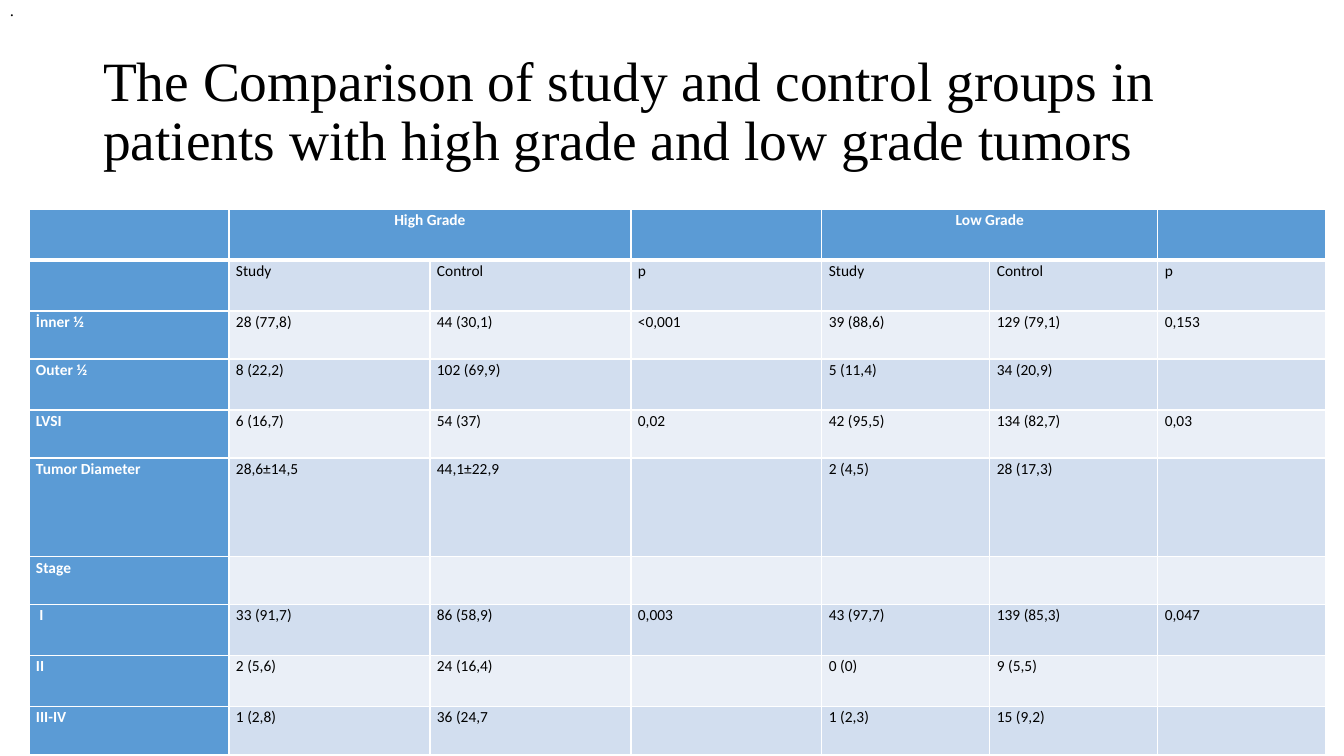
from lxml import etree
from pptx import Presentation
from pptx.dml.color import RGBColor
from pptx.enum.text import MSO_ANCHOR, MSO_AUTO_SIZE, PP_ALIGN
from pptx.oxml.ns import qn
from pptx.util import Emu, Pt

TOP, MIDDLE = MSO_ANCHOR.TOP, MSO_ANCHOR.MIDDLE
LEFT, CENTER = PP_ALIGN.LEFT, PP_ALIGN.CENTER
NO_FIT = MSO_AUTO_SIZE.NONE
SERIF, SANS = "Times New Roman", "Calibri"
BLACK, WHITE, BLUE = "000000", "FFFFFF", "5B9BD5"
BANDS = ("EAEFF7", "D2DEEF")

COLUMN_WIDTHS = (200, 201, 201, 191, 168, 168, 168)
ROW_HEIGHTS = (51, 51, 48, 51, 48, 99, 48, 51, 51, 48)
ROWS = (
    ("", "High Grade", "", "", "Low Grade", "", ""),
    ("", "Study", "Control", "p", "Study", "Control", "p"),
    ("İnner ½", "28 (77,8)", "44 (30,1)", "<0,001", "39 (88,6)", "129 (79,1)", "0,153"),
    ("Outer ½", "8 (22,2)", "102 (69,9)", "", "5 (11,4)", "34 (20,9)", ""),
    ("LVSI", "6 (16,7)", "54 (37)", "0,02", "42 (95,5)", "134 (82,7)", "0,03"),
    ("Tumor Diameter", "28,6±14,5", "44,1±22,9", "", "2 (4,5)", "28 (17,3)", ""),
    ("Stage", "", "", "", "", "", ""),
    (" I", "33 (91,7)", "86 (58,9)", "0,003", "43 (97,7)", "139 (85,3)", "0,047"),
    ("II", "2 (5,6)", "24 (16,4)", "", "0 (0)", "9 (5,5)", ""),
    ("III-IV", "1 (2,8)", "36 (24,7", "", "1 (2,3)", "15 (9,2)", ""),
)


def px(n):
    return Emu(round(n * 914400 / 100.8))


def color(value):
    return RGBColor.from_string(value)


def format_text(p, size, font, fill, bold=False, align=LEFT, spacing=1.0):
    p.alignment = align
    p.line_spacing = spacing
    for r in p.runs:
        r.font.size = Pt(size)
        r.font.name = font
        r.font.bold = bold
        r.font.color.rgb = color(fill)


def add_title(s, x, y, w, h):
    sp = s.shapes.title
    sp.left, sp.top, sp.width, sp.height = map(px, (x, y, w, h))
    tf = sp.text_frame
    tf.text = "The Comparison of study and control groups in patients with high grade and low grade tumors"
    tf.word_wrap = True
    tf.auto_size = NO_FIT
    tf.vertical_anchor = MIDDLE
    format_text(tf.paragraphs[0], 39.6, SERIF, BLACK, spacing=0.9)


def add_dot(s, x, y, w, h):
    tf = s.shapes.add_textbox(*map(px, (x, y, w, h))).text_frame
    tf.text = "."
    tf.word_wrap = False
    tf.vertical_anchor = TOP
    format_text(tf.paragraphs[0], 12, SERIF, BLACK)


def set_borders(cell, widths):
    tcPr = cell._tc.get_or_add_tcPr()
    for side, width in zip("LRTB", widths):
        ln = etree.SubElement(tcPr, qn(f"a:ln{side}"), w=str(Pt(width)))
        fill = etree.SubElement(ln, qn("a:solidFill"))
        etree.SubElement(fill, qn("a:srgbClr"), val=WHITE)


def format_cell(cell, row, col, text):
    header = row == 0 or col == 0
    set_borders(cell, (1, 1, 3 if row == 1 else 1, 3 if row == 0 else 1))
    cell.fill.solid()
    cell.fill.fore_color.rgb = color(BLUE if header else BANDS[row % 2])
    cell.margin_left = cell.margin_right = px(7)
    cell.margin_top = cell.margin_bottom = 0
    cell.vertical_anchor = TOP
    if text:
        cell.text = text
        format_text(cell.text_frame.paragraphs[0], 11, SANS, WHITE if header else BLACK,
                    header, CENTER if row == 0 else LEFT, 1.07)


def add_comparison_table(s, x, y):
    size = (sum(COLUMN_WIDTHS), sum(ROW_HEIGHTS))
    table = s.shapes.add_table(len(ROWS), len(COLUMN_WIDTHS), px(x), px(y), *map(px, size)).table
    for column, width in zip(table.columns, COLUMN_WIDTHS):
        column.width = px(width)
    for row, height in zip(table.rows, ROW_HEIGHTS):
        row.height = px(height)
    for i, values in enumerate(ROWS):
        for j, text in enumerate(values):
            format_cell(table.cell(i, j), i, j, text)
    for j in (1, 4):
        table.cell(0, j).merge(table.cell(0, j + 1))


def main():
    prs = Presentation()
    prs.slide_width, prs.slide_height = px(1344), px(756)
    s = prs.slides.add_slide(prs.slide_layouts[5])
    add_title(s, 93, 40, 1159, 146)
    add_comparison_table(s, 29, 209)
    add_dot(s, 0, -5, 29, 61)
    prs.save("out.pptx")


if __name__ == "__main__":
    main()
